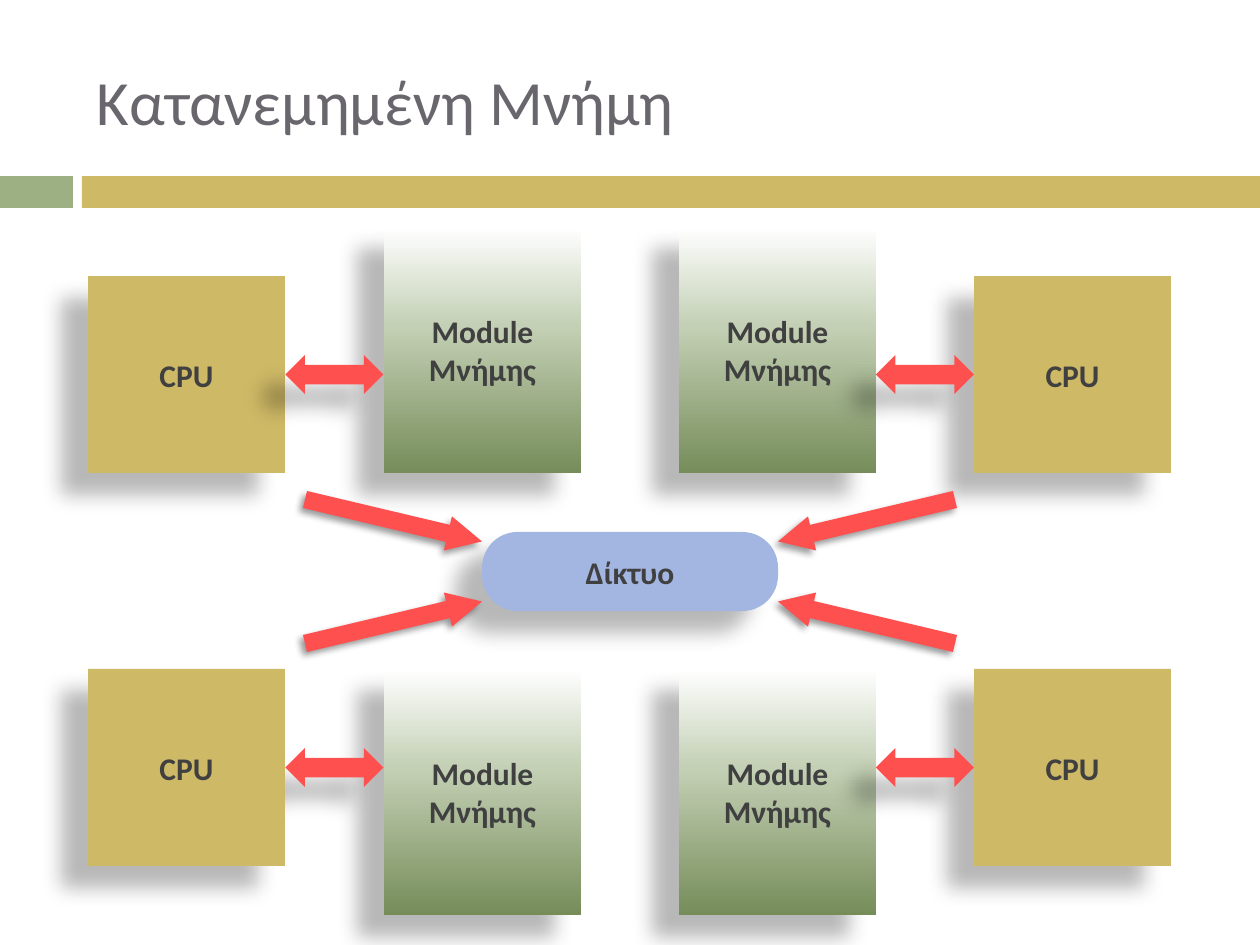
from lxml.etree import SubElement
from pptx import Presentation
from pptx.dml.color import RGBColor
from pptx.enum.shapes import MSO_CONNECTOR as CONN, MSO_SHAPE as SHAPE
from pptx.enum.text import MSO_ANCHOR as ANCHOR, PP_ALIGN as ALIGN
from pptx.oxml import parse_xml
from pptx.oxml.ns import nsdecls, qn
from pptx.util import Emu, Pt

W, H = 1260, 945
TITLE = "Κατανεμημένη Μνήμη"
GOLD, GREEN, BLUE, RED = "CEB966", "9CB084", "A3B6E2", "FF5050"
BANDS = [(0, 73, GREEN), (82, W - 82, GOLD)]
GRADIENT = [(0, "768D5A"), (60, "C4D0B5"), (100, "FFFFFF")]
FONT = {"name": "Calibri", "size": Pt(18), "bold": True}

CPU, MEMORY, NETWORK = "CPU", "Module Μνήμης", "Δίκτυο"
SIDE, MEM_H = 197, 246
CPU_X, MEM_X = (88, 974), (384, 679)
MEM_Y, CPU_Y = (227, 669), (276, 669)
LINK_W, LINK_L = 39, 98
NET = (482, 532, 296, 79)
SPOKE = [(305, 72), (482, 30)]  # x, and distance above the middle of the network

# alpha %, blur, distance, direction
BOX_SHADOW = (28, 11.8, 19.7, 141)
LINE_SHADOW = (40, 4, 3, 135)


def px(n):
    return Emu(round(n * 914400 / 126))


def color(value):
    return RGBColor.from_string(value)


def add_shadow(s, alpha, blur, dist, angle):
    s._element.spPr.append(parse_xml(
        f'<a:effectLst {nsdecls("a")}><a:outerShdw blurRad="{Pt(blur)}" dist="{Pt(dist)}"'
        f' dir="{angle * 60000}" algn="ctr" rotWithShape="0"><a:srgbClr val="000000">'
        f'<a:alpha val="{alpha * 1000}"/></a:srgbClr></a:outerShdw></a:effectLst>'))


def add_shape(kind, x, y, w, h, fill, shadow=BOX_SHADOW):
    s = slide.shapes.add_shape(kind, px(x), px(y), px(w), px(h))
    s.line.fill.background()
    if fill == GRADIENT:
        stops = "".join(f'<a:gs pos="{pos * 1000}"><a:srgbClr val="{c}"/></a:gs>'
                        for pos, c in fill)
        s._element.spPr.find(qn("a:prstGeom")).addnext(parse_xml(
            f'<a:gradFill {nsdecls("a")} rotWithShape="1"><a:gsLst>{stops}</a:gsLst>'
            '<a:lin ang="16200000" scaled="0"/></a:gradFill>'))
    else:
        s.fill.solid()
        s.fill.fore_color.rgb = color(fill)
    if shadow:
        add_shadow(s, *shadow)
    else:
        s.shadow.inherit = False
    return s


def format_text(s, text, font, rgb, align):
    tf = s.text_frame
    tf.word_wrap = True
    tf.vertical_anchor = ANCHOR.MIDDLE
    p = tf.paragraphs[0]
    p.alignment = align
    r = p.add_run()
    r.text = text
    for name, value in font.items():
        setattr(r.font, name, value)
    r.font.color.rgb = color(rgb)


def add_box(text, x, y, w, h, fill, kind=SHAPE.RECTANGLE):
    s = add_shape(kind, x, y, w, h, fill)
    format_text(s, text, FONT, "404040", ALIGN.CENTER)
    return s


def add_link(row, col):
    """Double arrow across the gap between a CPU and its memory."""
    left = (CPU_X[0], MEM_X[1])[col] + SIDE
    right = (MEM_X[0], CPU_X[1])[col]
    x = (left + right - LINK_W) / 2
    y = CPU_Y[row] + (SIDE - LINK_L) / 2
    add_shape(SHAPE.UP_DOWN_ARROW, x, y, LINK_W, LINK_L, RED).rotation = 270


def add_spoke(row, col):
    """Arrow from a CPU corner to the network, mirrored for each quadrant."""
    mid_y = NET[1] + NET[3] / 2
    ends = []
    for x, rise in SPOKE:
        ends += [px(W - x if col else x), px(mid_y + (rise if row else -rise))]
    s = slide.shapes.add_connector(CONN.STRAIGHT, *ends)
    s.line.color.rgb = color(RED)
    s.line.width = Pt(10)
    SubElement(s.line._get_or_add_ln(), qn("a:tailEnd"), type="triangle", w="sm", len="sm")
    add_shadow(s, *LINE_SHADOW)


prs = Presentation()
prs.slide_width, prs.slide_height = px(W), px(H)
slide = prs.slides.add_slide(prs.slide_layouts[5])

title = slide.shapes.title
title.left, title.top, title.width, title.height = map(px, (84, 32, 1124, 136))
format_text(title, TITLE, {"name": "Calibri", "size": Pt(36)}, "69676D", ALIGN.LEFT)

for x, w, fill in BANDS:
    add_shape(SHAPE.RECTANGLE, x, 176, w, 32, fill, shadow=None)

for row in (0, 1):
    for x in MEM_X:
        add_box(MEMORY, x, MEM_Y[row], SIDE, MEM_H, GRADIENT)
    if row == 1:
        add_link(row, 0)  # its shadow lies behind the lower left CPU
    for x in CPU_X:
        add_box(CPU, x, CPU_Y[row], SIDE, SIDE, GOLD)
    if row == 0:
        add_link(row, 0)
    add_link(row, 1)

add_box(NETWORK, *NET, BLUE, SHAPE.ROUNDED_RECTANGLE).adjustments[0] = 0.45

for col in (0, 1):
    for row in (1, 0):
        add_spoke(row, col)

prs.save("out.pptx")
